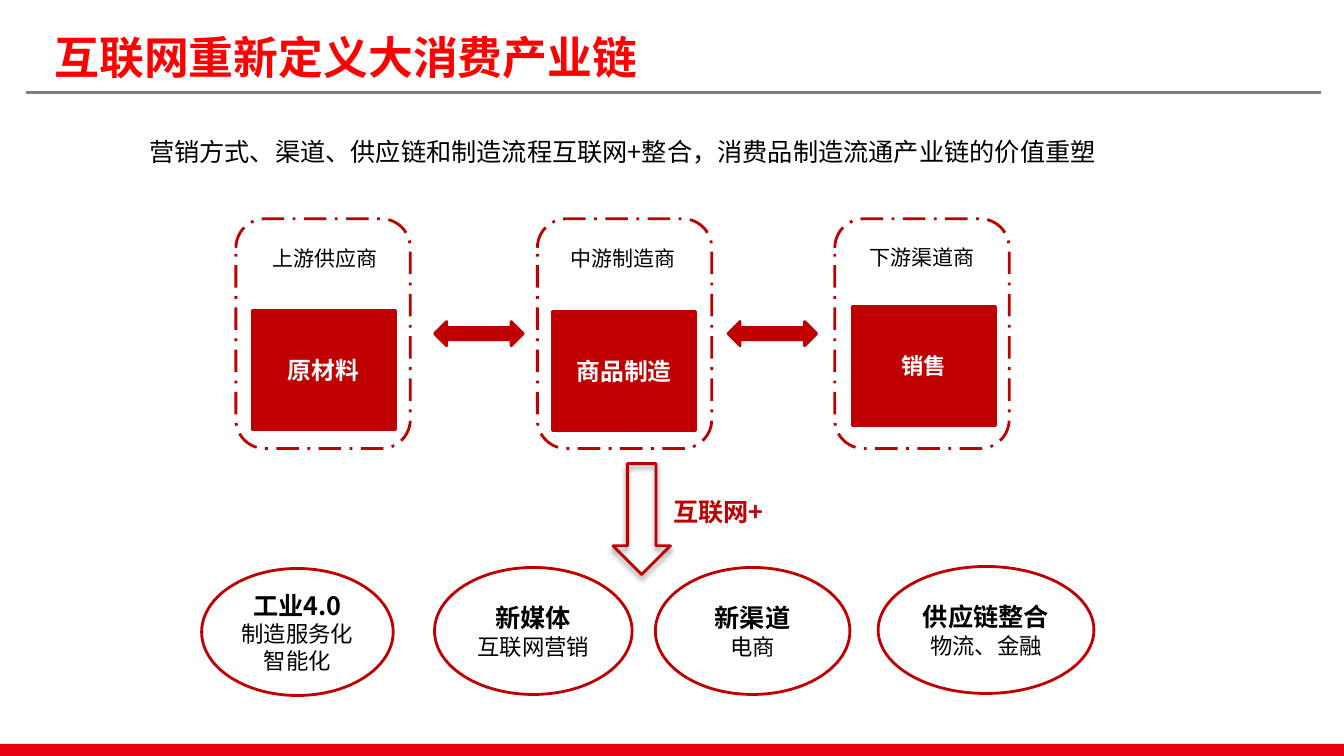
from pptx import Presentation
from pptx.dml.color import RGBColor
from pptx.enum import dml, shapes, text
from pptx.oxml import parse_xml
from pptx.oxml.ns import nsdecls
from pptx.util import Inches, Pt

FONT = "Noto Sans CJK SC"
RED, BLACK, WHITE = "C00000", "000000", "FFFFFF"
KIND = shapes.MSO_SHAPE


def add_shape(kind, box, fill=None, line=RED):
    sp = s.shapes.add_shape(kind, *map(Inches, box))
    sp.shadow.inherit = False
    if fill:
        sp.fill.solid()
        sp.fill.fore_color.rgb = RGBColor.from_string(fill)
    else:
        sp.fill.background()
    if line:
        sp.line.color.rgb = RGBColor.from_string(line)
        sp.line.width = Pt(2)
    else:
        sp.line.fill.background()
    return sp


def write(sp, lines, align=text.PP_ALIGN.LEFT, anchor=text.MSO_ANCHOR.TOP, latin=FONT):
    """Fill a shape with paragraphs given as (words, size, bold, colour)."""
    tf = sp.text_frame
    tf.word_wrap = True
    tf.vertical_anchor = anchor
    for i, (words, size, bold, color) in enumerate(lines):
        p = tf.add_paragraph() if i else tf.paragraphs[0]
        p.alignment = align
        r = p.add_run()
        r.text = words
        for name, value in dict(name=latin, size=Pt(size), bold=bold).items():
            setattr(r.font, name, value)
        r.font.color.rgb = RGBColor.from_string(color)
        ea = f'<a:ea {nsdecls("a")} typeface="{FONT}"/>'
        r.font._element.find("{*}latin").addnext(parse_xml(ea))


prs = Presentation()
prs.slide_width, prs.slide_height = Inches(13.33), Inches(7.5)
s = prs.slides.add_slide(prs.slide_layouts[5])

# Title, rule and footer band
title = s.shapes.title
for name, value in dict(left=0.44, top=0.24, width=10.09, height=0.64).items():
    setattr(title, name, Inches(value))
write(title, [("互联网重新定义大消费产业链", 32, True, "FF0000")],
      anchor=text.MSO_ANCHOR.MIDDLE, latin="Times New Roman")

rule = s.shapes.add_connector(shapes.MSO_CONNECTOR.STRAIGHT,
                              *map(Inches, (0.26, 0.92, 13.1, 0.92)))
rule.line.color.rgb = RGBColor.from_string("808080")
rule.line.width = Pt(2.25)
rule._element.spPr.append(parse_xml(f'<a:effectLst {nsdecls("a")}/>'))
add_shape(KIND.RECTANGLE, (0, 7.38, 13.33, 0.12), "E60012", None)

# Supply chain stages: frame left, block left and top, block text and size, label
center = dict(align=text.PP_ALIGN.CENTER, anchor=text.MSO_ANCHOR.MIDDLE)
stages = [
    (2.34, 2.5, 3.08, "原材料", 17, (2.6, 2.39), "上游供应商"),
    (5.33, 5.48, 3.09, "商品制造", 17, (5.56, 2.39), "中游制造商"),
    (8.28, 8.45, 3.04, "销售", 16, (8.53, 2.38), "下游渠道商"),
]
labels = [
    ((1.38, 1.3, 9.97, 0.71),
     ("营销方式、渠道、供应链和制造流程互联网+整合，消费品制造流通产业链的价值重塑", 18, False, BLACK)),
    ((6.58, 4.87, 1.37, 0.4), ("互联网+", 18, True, RED)),
]
for frame_left, left, top, words, size, label_at, label in stages:
    frame = add_shape(KIND.ROUNDED_RECTANGLE, (frame_left, 2.17, 1.73, 2.28))
    frame.line.dash_style = dml.MSO_LINE.LONG_DASH_DOT
    block = add_shape(KIND.RECTANGLE, (left, top, 1.42, 1.18), RED)
    write(block, [(words, size, True, WHITE)], **center)
    labels.append(((*label_at, 1.26, 0.35), (label, 15, False, BLACK)))

for left in (4.31, 7.22):
    add_shape(KIND.LEFT_RIGHT_ARROW, (left, 3.19, 0.88, 0.24), RED)

# Outcomes
outcomes = [
    ((2, 5.64, 1.9), "工业4.0", "制造服务化智能化"),
    ((4.31, 5.63, 1.96), "新媒体", "互联网营销"),
    ((6.5, 5.63, 1.93), "新渠道", "电商"),
    ((8.71, 5.62, 2.14), "供应链整合", "物流、金融"),
]
for box, head, detail in outcomes:
    oval = add_shape(KIND.OVAL, (*box, 1.26))
    write(oval, [(head, 18, True, BLACK), (detail, 16, False, BLACK)], **center)

# Down arrow with a soft shadow
arrow = add_shape(KIND.DOWN_ARROW, (6.08, 4.6, 0.57, 1.1))
arrow._element.spPr.find("{*}effectLst").append(parse_xml(
    f'<a:outerShdw {nsdecls("a")} blurRad="{Pt(4)}" dist="{Pt(3)}" dir="5400000" rotWithShape="0">'
    '<a:srgbClr val="000000"><a:alpha val="40000"/></a:srgbClr></a:outerShdw>'))

for box, line in labels:
    tb = s.shapes.add_textbox(*map(Inches, box))
    tb.text_frame.margin_right = 0
    write(tb, [line])

prs.save("out.pptx")
